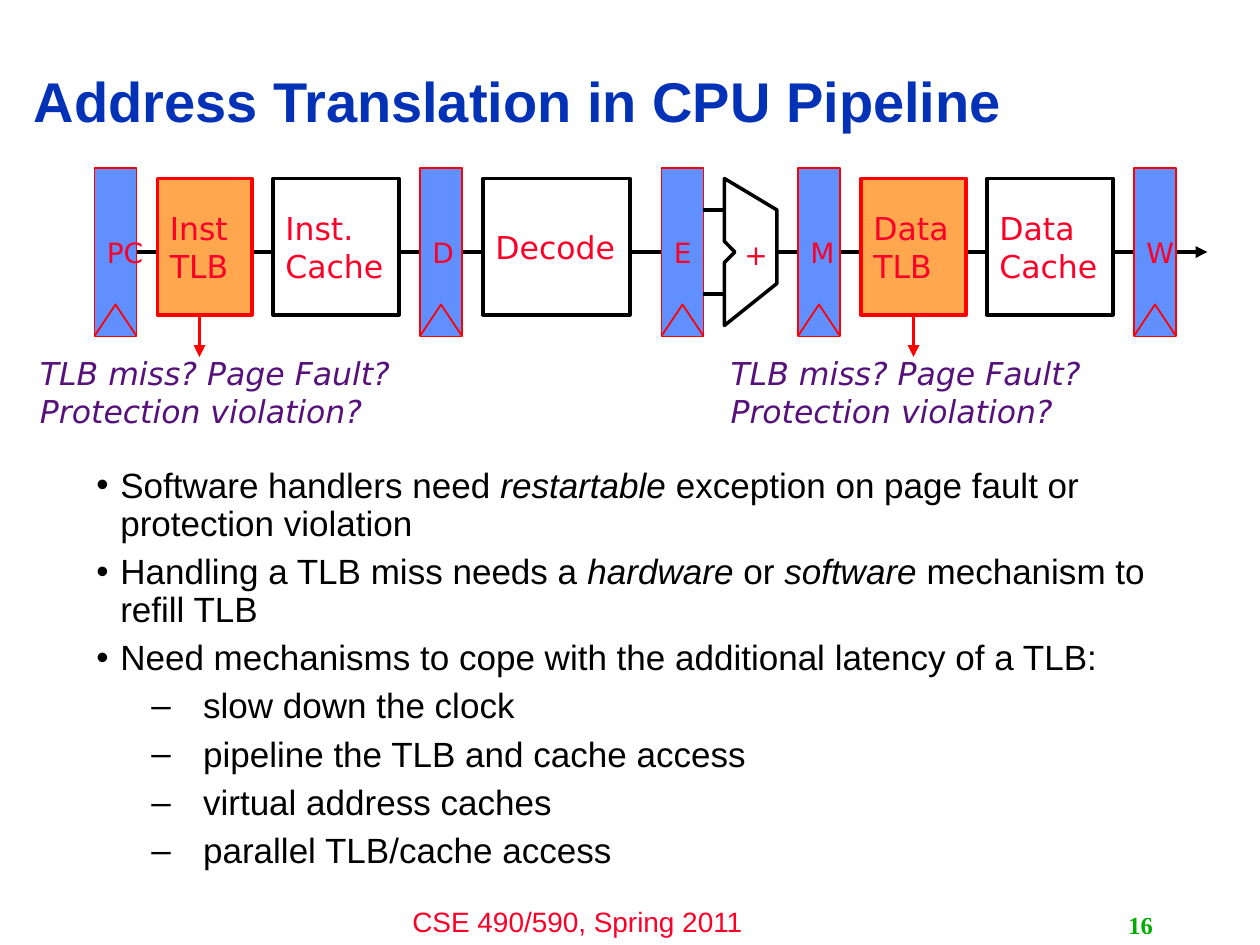
from dataclasses import dataclass

from lxml import etree
from pptx import Presentation
from pptx.dml.color import RGBColor
from pptx.enum import shapes, text
from pptx.oxml import ns
from pptx.util import Pt


@dataclass(frozen=True)
class Theme:
    sans: str = "Arial"
    diagram: str = "DejaVu Sans"
    serif: str = "Times New Roman"
    title: str = "0332B7"
    label: str = "FC0128"
    note: str = "56127A"
    number: str = "00AE00"
    ink: str = "000000"
    paper: str = "FFFFFF"
    alert: str = "FF0000"
    register: str = "618FFD"
    tlb: str = "FFA74F"
    title_size: int = 32
    body_size: int = 20
    stage_size: int = 18
    small_size: int = 16
    number_size: int = 14
    wire: float = 2.25
    outline: float = 2
    thin: float = 1


T = Theme()
ALIGN = text.PP_ALIGN
ANCHOR = text.MSO_ANCHOR


def rgb(value):
    return RGBColor.from_string(value)


def write(tf, lines, *, size, color, font=T.sans, bold=False, italic=False,
          align=ALIGN.LEFT, anchor=ANCHOR.MIDDLE, wrap=True, spacing=None):
    """Fill a text frame; *stars* around words turn their slant over."""
    tf.word_wrap = wrap
    tf.auto_size = text.MSO_AUTO_SIZE.NONE
    tf.vertical_anchor = anchor
    tf.margin_left = tf.margin_right = Pt(7.2)
    tf.margin_top = tf.margin_bottom = Pt(3.6)
    for i, line in enumerate(lines):
        p = tf.paragraphs[0] if i == 0 else tf.add_paragraph()
        p.alignment = align
        p.line_spacing = spacing
        for j, part in enumerate(line.split("*")):
            r = p.add_run()
            r.text = part
            f = r.font
            f.name, f.size, f.bold = font, Pt(size), bold
            f.italic = italic != (j % 2 == 1)
            f.color.rgb = rgb(color)


def text_box(s, box, lines, **fmt):
    sp = s.shapes.add_textbox(*map(Pt, box))
    write(sp.text_frame, lines, **fmt)
    return sp


def paint(sp, fill, line, width):
    sp.shadow.inherit = False
    sp.fill.solid()
    sp.fill.fore_color.rgb = rgb(fill)
    sp.line.color.rgb = rgb(line)
    sp.line.width = Pt(width)


def wire(s, start, end, color=T.ink, arrow=False):
    cxn = s.shapes.add_connector(shapes.MSO_CONNECTOR.STRAIGHT,
                                 *map(Pt, start + end))
    cxn.line.color.rgb = rgb(color)
    cxn.line.width = Pt(T.wire)
    if arrow:
        etree.SubElement(cxn._element.spPr.find(ns.qn("a:ln")),
                         ns.qn("a:tailEnd"), type="triangle")
    etree.SubElement(cxn._element.spPr, ns.qn("a:effectLst"))


def outline(parent, points, close):
    fb = parent.shapes.build_freeform(*points[0], scale=Pt(1))
    fb.add_line_segments(points[1:], close=close)
    return fb.convert_to_shape()


def register(s, box, name):
    """A pipeline register with its clock notch."""
    x, y, w, h = box
    group = s.shapes.add_group_shape()
    sp = group.shapes.add_shape(shapes.MSO_SHAPE.RECTANGLE, *map(Pt, box))
    paint(sp, T.register, T.alert, T.thin)
    write(sp.text_frame, [name], size=T.small_size, color=T.label,
          font=T.diagram, wrap=False)
    notch = outline(group, [(x, y + h), (x + w / 2, y + h - 18),
                            (x + w, y + h)], close=False)
    paint(notch, T.register, T.alert, T.thin)


def stage(s, box, name, is_tlb):
    sp = s.shapes.add_shape(shapes.MSO_SHAPE.RECTANGLE, *map(Pt, box))
    paint(sp, T.tlb if is_tlb else T.paper,
          T.alert if is_tlb else T.ink, T.outline)
    write(sp.text_frame, [name], size=T.stage_size, color=T.label,
          font=T.diagram)


def adder(s, box):
    x, y, w, h = box
    mid = y + h / 2
    points = [(x, y), (x, mid - 6), (x + 6, mid), (x, mid + 6), (x, y + h),
              (x + w, mid + 18), (x + w, mid - 24)]
    paint(outline(s, points, close=True), T.paper, T.ink, T.outline)
    for dy in (-24, 24):
        wire(s, (x - 12, mid + dy), (x, mid + dy))
    text_box(s, (x + 4.3, mid - 12, 27.4, 26.6), ["+"], size=T.small_size,
             color=T.label, font=T.diagram, wrap=False)


def pipeline(s, box):
    """Registers fill the height of the box; the notes hang below it."""
    x, y, w, h = box
    mid = y + h / 2
    wire(s, (x + 390, mid), (x + w, mid), arrow=True)
    wire(s, (x + 24, mid), (x + 324, mid))
    for name, dx in (("PC", 0), ("D", 186), ("E", 324), ("M", 402),
                     ("W", 594)):
        register(s, (x + dx, y, 24, h), name)
    for name, dx, width in (("Inst TLB", 36, 54), ("Inst. Cache", 102, 72),
                            ("Decode", 222, 84), ("Data TLB", 438, 60),
                            ("Data Cache", 510, 72)):
        stage(s, (x + dx, y + 6, width, h - 18), name, name.endswith("TLB"))
    adder(s, (x + 360, y + 6, 30, h - 12))
    for arrow_dx, note_dx in ((60, -38.2), (468, 356.4)):
        wire(s, (x + arrow_dx, y + h - 12), (x + arrow_dx, y + h + 12),
             color=T.alert, arrow=True)
        text_box(s, (x + note_dx, y + h + 6.8, 216, 50.4),
                 ["TLB miss? Page Fault?", "Protection violation?"],
                 size=T.stage_size, color=T.note, font=T.diagram,
                 italic=True, wrap=False)


def title(s, box, line):
    sp = s.shapes.title
    sp.left, sp.top, sp.width, sp.height = map(Pt, box)
    write(sp.text_frame, [line], size=T.title_size, color=T.title, bold=True,
          spacing=0.9)


def bullets(s, box, items):
    """Items are (level, line) pairs."""
    styles = (("•", 13.7, 13.7), ("–", 61, 29.5))
    sp = text_box(s, box, [line for _, line in items], size=T.body_size,
                  color=T.ink, anchor=ANCHOR.TOP, spacing=0.9)
    for p, (level, _) in zip(sp.text_frame.paragraphs, items):
        mark, margin, hang = styles[level]
        p.level = level
        p.space_before = Pt(6)
        pPr = p._p.get_or_add_pPr()
        pPr.set("marL", str(Pt(margin)))
        pPr.set("indent", str(-Pt(hang)))
        etree.SubElement(pPr, ns.qn("a:buFont"), typeface=T.sans)
        etree.SubElement(pPr, ns.qn("a:buChar"), char=mark)


def footer(s, box):
    x, y, w, h = box
    text_box(s, (x, y, 240, h), ["CSE 490/590, Spring 2011"],
             size=T.small_size, color=T.label, align=ALIGN.CENTER)
    text_box(s, (x + w - 150, y + 3.6, 150, 23), ["16"], size=T.number_size,
             color=T.number, font=T.serif, bold=True, align=ALIGN.RIGHT)


def main():
    prs = Presentation()
    prs.slide_width, prs.slide_height = Pt(720), Pt(540)
    s = prs.slides.add_slide(prs.slide_layouts.get_by_name("Title Only"))
    footer(s, (210, 513.4, 456, 26.6))
    title(s, (12, 27, 680, 65.5), "Address Translation in CPU Pipeline")
    bullets(s, (48, 264, 642, 246), [
        (0, "Software handlers need *restartable* exception on page fault "
            "or protection violation"),
        (0, "Handling a TLB miss needs a *hardware* or *software* mechanism "
            "to refill TLB"),
        (0, "Need mechanisms to cope with the additional latency of a TLB:"),
        (1, "slow down the clock"),
        (1, "pipeline the TLB and cache access"),
        (1, "virtual address caches"),
        (1, "parallel TLB/cache access"),
    ])
    pipeline(s, (54, 96, 636, 96))
    prs.save("out.pptx")


if __name__ == "__main__":
    main()
